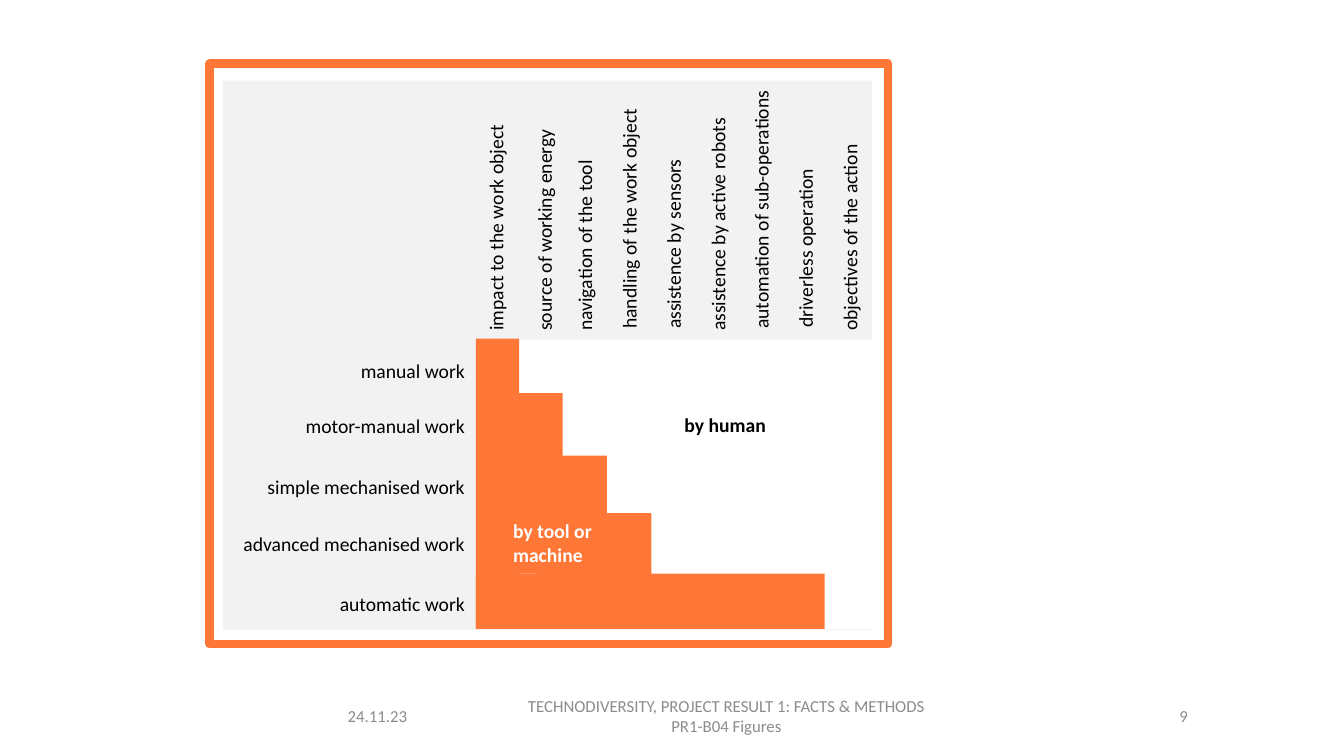
from dataclasses import dataclass

from pptx import Presentation
from pptx.dml.color import RGBColor
from pptx.enum.shapes import MSO_SHAPE
from pptx.enum.text import MSO_ANCHOR, MSO_AUTO_SIZE, PP_ALIGN
from pptx.slide import Slide
from pptx.util import Emu, Pt

EMU_PER_PX = 9144  # 100 px to the inch
COLOURS = {
    "human": "FFFFFF",
    "machine": "FF7737",
    "panel": "F2F2F2",
    "text": "000000",
    "footer": "8C8C8C",
}


@dataclass(frozen=True)
class Area:
    left: int
    top: int
    width: int
    height: int
    fill: str | None = None
    line: str | None = None
    line_pt: int = 0


@dataclass(frozen=True)
class Label:
    text: str
    left: int
    top: int
    width: int
    height: int = 34
    size: int = 14
    colour: str = "text"
    align: PP_ALIGN = PP_ALIGN.LEFT
    bold: bool = False
    rotation: int = 0
    footer: bool = False


def px(length: int) -> Emu:
    return Emu(length * EMU_PER_PX)


def rgb(name: str) -> RGBColor:
    return RGBColor.from_string(COLOURS[name])


def draw_area(slide: Slide, area: Area) -> None:
    rectangle = slide.shapes.add_shape(
        MSO_SHAPE.RECTANGLE, px(area.left), px(area.top), px(area.width), px(area.height)
    )
    rectangle.shadow.inherit = False
    if area.fill:
        rectangle.fill.solid()
        rectangle.fill.fore_color.rgb = rgb(area.fill)
    else:
        rectangle.fill.background()
    if area.line:
        rectangle.line.color.rgb = rgb(area.line)
        rectangle.line.width = Pt(area.line_pt)
    else:
        rectangle.line.fill.background()


def draw_label(slide: Slide, label: Label) -> None:
    box = slide.shapes.add_textbox(
        px(label.left), px(label.top), px(label.width), px(label.height)
    )
    box.rotation = label.rotation
    frame = box.text_frame
    frame.text = label.text
    frame.word_wrap = True
    if label.footer:
        frame.vertical_anchor = MSO_ANCHOR.MIDDLE
    else:
        frame.auto_size = MSO_AUTO_SIZE.SHAPE_TO_FIT_TEXT
    for paragraph in frame.paragraphs:
        paragraph.alignment = label.align
        for run in paragraph.runs:
            run.font.name = "Calibri"
            run.font.size = Pt(label.size)
            run.font.bold = label.bold
            run.font.color.rgb = rgb(label.colour)


# Footer: text, left, width, alignment
FOOTERS = [
    ("24.11.23", 335, 134, PP_ALIGN.LEFT),
    (
        "TECHNODIVERSITY, PROJECT RESULT 1: FACTS & METHODS\nPR1-B04 Figures",
        486, 469, PP_ALIGN.CENTER,
    ),
    ("9", 977, 211, PP_ALIGN.RIGHT),
]

# Rows: work method, top
WORK_METHODS = [
    ("manual work", 351),
    ("motor-manual work", 406),
    ("simple mechanised work", 466),
    ("advanced mechanised work", 523),
    ("automatic work", 582),
]

# Columns: work function, left and top before rotation
WORK_FUNCTIONS = [
    ("impact to the work object", 355, 184),
    ("source of working energy", 403, 184),
    ("navigation of the tool", 443, 184),
    ("handling of the work object", 487, 182),
    ("assistence by sensors", 531, 182),
    ("assistence by active robots", 575, 184),
    ("automation of sub-operations", 618, 182),
    ("driverless operation", 662, 181),
    ("objectives of the action", 706, 184),
]

# Staircase of work done by tool or machine
MACHINE_STEPS = [
    (472, 336, 43, 288),
    (472, 569, 346, 55),
    (489, 390, 69, 179),
    (533, 452, 69, 119),
    (577, 509, 69, 61),
]


def main() -> None:
    presentation = Presentation()
    presentation.slide_width, presentation.slide_height = px(1333), px(750)
    slide = presentation.slides.add_slide(presentation.slide_layouts[6])

    # Footer
    for text, left, width, align in FOOTERS:
        draw_label(slide, Label(text, left, 690, width, 40, 12, "footer", align, footer=True))

    # Panel with row and column headings
    draw_area(slide, Area(221, 80, 644, 545, "panel"))
    for text, top in WORK_METHODS:
        draw_label(slide, Label(text, 230, top, 241, align=PP_ALIGN.RIGHT))
    for text, left, top in WORK_FUNCTIONS:
        draw_label(slide, Label(text, left, top, 274, rotation=270))

    # Share of human and machine
    draw_area(slide, Area(473, 337, 394, 287, "human"))
    for step in MACHINE_STEPS:
        draw_area(slide, Area(*step, fill="machine"))
    draw_label(slide, Label("by tool or machine", 499, 510, 121, 57, colour="human", bold=True))
    draw_label(slide, Label("by human", 669, 405, 160, bold=True))

    # Frame around the figure
    draw_area(slide, Area(208, 63, 673, 576, line="machine", line_pt=6))

    presentation.save("out.pptx")


if __name__ == "__main__":
    main()
